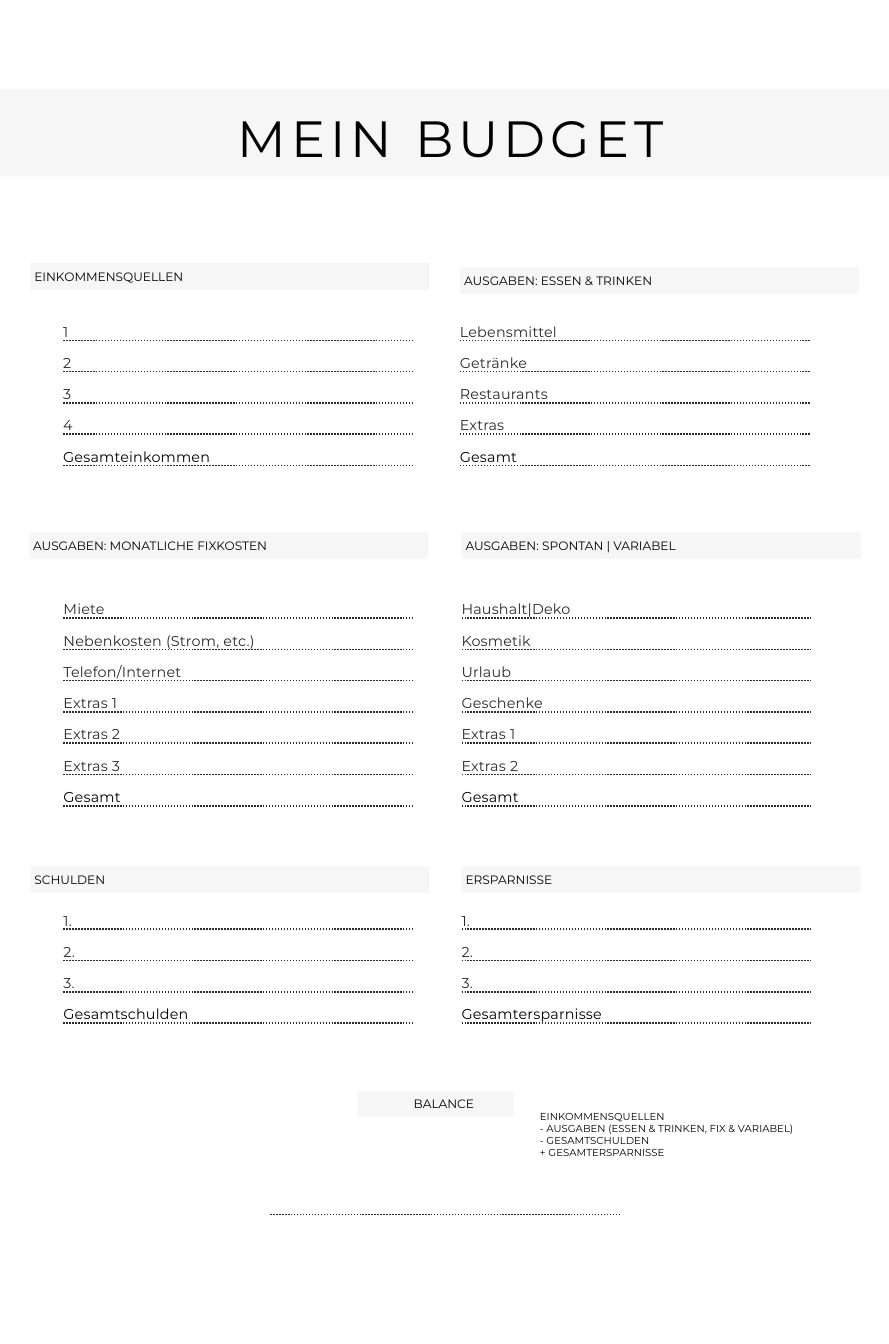
from dataclasses import dataclass

from pptx import Presentation
from pptx.dml.color import RGBColor
from pptx.enum import dml, shapes, text
from pptx.oxml import parse_xml
from pptx.util import Pt


@dataclass(frozen=True)
class Theme:
    font: str = "Montserrat"
    black: RGBColor = RGBColor(0x00, 0x00, 0x00)
    ink: RGBColor = RGBColor(0x2B, 0x2B, 0x2B)
    band: RGBColor = RGBColor(0xF6, 0xF6, 0xF6)
    title: float = 25.2
    label: float = 7.1
    header: float = 6
    note: float = 5


theme = Theme()
EMPTY_EFFECTS = '<a:effectLst xmlns:a="http://schemas.openxmlformats.org/drawingml/2006/main"/>'


def write(box, words, size, leading, color=theme.black, spacing=0,
          align=text.PP_ALIGN.LEFT, anchor=text.MSO_ANCHOR.TOP):
    """Fill a shape with text; leading and letter spacing are in points."""
    frame = box.text_frame
    frame.text = words
    frame.word_wrap = True
    frame.auto_size = text.MSO_AUTO_SIZE.NONE
    frame.vertical_anchor = anchor
    frame.margin_left = frame.margin_right = frame.margin_top = frame.margin_bottom = 0
    for para in frame.paragraphs:
        para.alignment = align
        para.line_spacing = Pt(leading)
        for span in para.runs:
            span.font.name = theme.font
            span.font.size = Pt(size)
            span.font.color.rgb = color
    if spacing:
        for properties in box.element.xpath(".//a:rPr"):
            properties.set("spc", str(round(spacing * 100)))


def add_bar(left, top, width, height):
    bar = page.shapes.add_shape(
        shapes.MSO_SHAPE.RECTANGLE, Pt(left), Pt(top), Pt(width), Pt(height))
    bar.shadow.inherit = False
    bar.fill.solid()
    bar.fill.fore_color.rgb = theme.band
    bar.line.fill.background()
    return bar


deck = Presentation()
deck.slide_width, deck.slide_height = Pt(439.92), Pt(665.28)
page = deck.slides.add_slide(deck.slide_layouts.get_by_name("Title Only"))

# Title on its band
title_band = add_bar(-41.8, 44, 499, 43.4)
title = page.shapes.title
title.left, title.top, title.width, title.height = Pt(26.6), Pt(47.5), Pt(393), Pt(34)
write(title, "MEIN BUDGET", theme.title, 35.3, spacing=2.5, align=text.PP_ALIGN.CENTER)
title_band.element.addnext(title.element)

# Sections: heading, bar left, bar top, row left, first rule, row labels
sections = [
    ("EINKOMMENSQUELLEN", 15, 130.3, 31.3, 168.5,
     ["1", "2", "3", "4", "Gesamteinkommen"]),
    ("AUSGABEN: ESSEN & TRINKEN", 227.7, 132.3, 227.6, 168.5,
     ["Lebensmittel", "Getränke", "Restaurants", "Extras", "Gesamt"]),
    ("AUSGABEN: MONATLICHE FIXKOSTEN", 14.4, 263.5, 31.4, 306,
     ["Miete", "Nebenkosten (Strom, etc.)", "Telefon/Internet",
      "Extras 1", "Extras 2", "Extras 3", "Gesamt"]),
    ("AUSGABEN: SPONTAN | VARIABEL", 228.4, 263.5, 228.4, 306,
     ["Haushalt|Deko", "Kosmetik", "Urlaub", "Geschenke",
      "Extras 1", "Extras 2", "Gesamt"]),
    ("SCHULDEN", 15, 429, 31.4, 460,
     ["1.", "2.", "3.", "Gesamtschulden"]),
    ("ERSPARNISSE", 228.4, 429, 228.4, 460,
     ["1.", "2.", "3.", "Gesamtersparnisse"]),
]
BAR_HEIGHT = 13.1
ROW_STEP = 15.48
RULE_LENGTH = 173
LABEL_RISE = 8.7
rules = [(133.7, 601.2)]

for heading, bar_left, bar_top, row_left, first_rule, labels in sections:
    bar = add_bar(bar_left, bar_top, 197.5, BAR_HEIGHT)
    write(bar, heading, theme.header, 7, anchor=text.MSO_ANCHOR.MIDDLE)
    bar.text_frame.margin_left = Pt(2)
    for row, label in enumerate(labels):
        rule_top = first_rule + row * ROW_STEP
        rules.append((row_left, rule_top))
        width = 106 if len(label) > 20 else 82
        box = page.shapes.add_textbox(
            Pt(row_left), Pt(rule_top - LABEL_RISE), Pt(width), Pt(8.6))
        is_total = row == len(labels) - 1
        write(box, label, theme.label, 8.5, theme.black if is_total else theme.ink, spacing=0.1)

# Balance
balance = add_bar(177.2, 540, 77, BAR_HEIGHT)
write(balance, "BALANCE", theme.header, 7, align=text.PP_ALIGN.CENTER,
      anchor=text.MSO_ANCHOR.MIDDLE)
balance.text_frame.margin_left = Pt(8)

formula = page.shapes.add_textbox(Pt(267.2), Pt(550), Pt(134), Pt(22.5))
write(formula, "EINKOMMENSQUELLEN\n- AUSGABEN (ESSEN & TRINKEN, FIX & VARIABEL)\n"
      "- GESAMTSCHULDEN\n+ GESAMTERSPARNISSE", theme.note, 5.8)

# Dotted writing rules
for left, top in rules:
    rule = page.shapes.add_connector(
        shapes.MSO_CONNECTOR.STRAIGHT, Pt(left), Pt(top), Pt(left + RULE_LENGTH), Pt(top))
    rule.line.color.rgb = theme.ink
    rule.line.width = Pt(0.75)
    rule.line.dash_style = dml.MSO_LINE.ROUND_DOT
    rule.element.spPr.append(parse_xml(EMPTY_EFFECTS))

deck.save("out.pptx")
